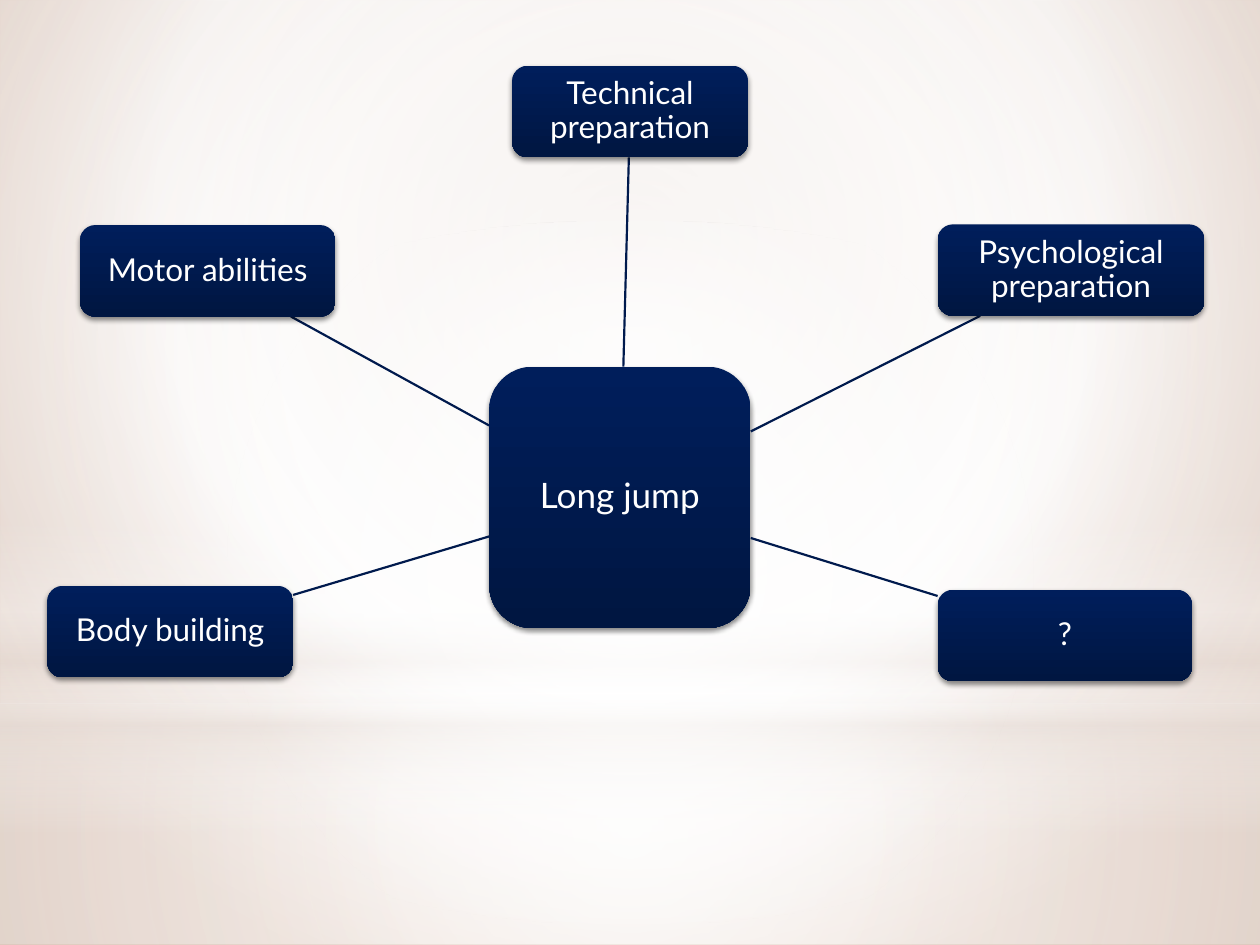
from lxml.etree import SubElement
from pptx import Presentation
from pptx.dml.color import RGBColor
from pptx.enum.shapes import MSO_CONNECTOR as Connector, MSO_SHAPE as Shape
from pptx.enum.text import MSO_ANCHOR as Anchor, PP_ALIGN as Align
from pptx.oxml import parse_xml
from pptx.oxml.ns import nsdecls, qn
from pptx.util import Pt

# Content: text and box as left, top, width, height in points
HUB = ("Long jump", (279.5, 209.5, 149.5, 149.5))
TOPICS = [
    ("Technical preparation", (292.7, 37.6, 134.7, 52.3)),
    ("Psychological preparation", (535.8, 128.2, 152.5, 52.3)),
    ("?", (535.8, 337, 145.5, 52.3)),
    ("Body building", (27, 334.8, 140.5, 52.3)),
    ("Motor abilities", (45.7, 128.6, 146, 52.3)),
]

WHITE, SAND = "FFFFFF", "E8DED8"
THEME = {
    "font": "Lato", "text": WHITE, "line": "001A4D",
    "hub_size": 20, "topic_size": 18,
    "box": [(0, "001E5B", 100), (100, "001641", 100)],
    "backdrop": [(0, "E3D4CB", 100), (60, WHITE, 100), (100, "CFAD99", 100)],
}
CENTRE = (50, 50, 50, 50)
# Soft light layers: shape, box, stops (position, colour, opacity), focus
LAYERS = [
    (Shape.RECTANGLE, (0, 402, 720, 138),
     [(0, WHITE, 91), (37, WHITE, 76), (100, SAND, 79)], CENTRE),
    (Shape.RECTANGLE, (0, 0, 720, 402),
     [(0, WHITE, 89), (48, WHITE, 62), (100, SAND, 79)], CENTRE),
    (Shape.RECTANGLE, (0, 297, 720, 180),
     [(0, WHITE, 0), (29, WHITE, 30), (45, SAND, 40), (55, WHITE, 26),
      (65, SAND, 60), (100, WHITE, 0)], None),
    (Shape.OVAL, (0, 126, 720, 402),
     [(0, WHITE, 100), (56, WHITE, 0)], CENTRE),
]


def set_gradient(fill, properties, stops, focus=None):
    """Fill with a circular gradient around focus, or else from top to bottom."""
    fill.solid()
    stop_xml = "".join(
        f'<a:gs pos="{position * 1000}"><a:srgbClr val="{color}">'
        f'<a:alpha val="{opacity * 1000}"/></a:srgbClr></a:gs>'
        for position, color, opacity in stops)
    if focus:
        sides = " ".join(f'{side}="{value * 1000}"' for side, value in zip("ltrb", focus))
        direction = f'<a:path path="circle"><a:fillToRect {sides}/></a:path>'
    else:
        direction = '<a:lin ang="5400000" scaled="0"/>'
    gradient = parse_xml(f'<a:gradFill {nsdecls("a")} rotWithShape="1">'
                         f'<a:gsLst>{stop_xml}</a:gsLst>{direction}</a:gradFill>')
    properties.replace(properties.find(qn("a:solidFill")), gradient)


def add_filled_shape(slide, kind, box, stops, focus=None):
    shape = slide.shapes.add_shape(kind, *map(Pt, box))
    shape.shadow.inherit = False
    shape.line.fill.background()
    set_gradient(shape.fill, shape.element.spPr, stops, focus)
    return shape


def add_box(slide, text, box, size, inset):
    shape = add_filled_shape(slide, Shape.ROUNDED_RECTANGLE, box, THEME["box"])
    effects = shape.element.spPr.find(qn("a:effectLst"))
    shadow = SubElement(effects, qn("a:outerShdw"), blurRad=str(Pt(3.1)),
                        dist=str(Pt(1.8)), dir="5400000", rotWithShape="0")
    color = SubElement(shadow, qn("a:srgbClr"), val="000000")
    SubElement(color, qn("a:alpha"), val="45000")

    frame = shape.text_frame
    frame.word_wrap = True
    frame.vertical_anchor = Anchor.MIDDLE
    frame.margin_left = frame.margin_right = Pt(inset)
    frame.margin_top = frame.margin_bottom = Pt(inset)
    paragraph = frame.paragraphs[0]
    paragraph.alignment = Align.CENTER
    paragraph.line_spacing = 0.9
    run = paragraph.add_run()
    run.text = text
    run.font.name = THEME["font"]
    run.font.size = Pt(size)
    run.font.color.rgb = RGBColor.from_string(THEME["text"])


def center(box):
    left, top, width, height = box
    return left + width / 2, top + height / 2


def edge_point(box, target):
    """Point where the ray from the box centre to target leaves the box."""
    x, y = center(box)
    dx, dy = target[0] - x, target[1] - y
    scale = 0.5 / max(abs(dx) / box[2], abs(dy) / box[3])
    return x + dx * scale, y + dy * scale


def add_spoke(slide, hub, topic):
    start, end = edge_point(hub, center(topic)), edge_point(topic, center(hub))
    spoke = slide.shapes.add_connector(Connector.STRAIGHT, *map(Pt, start + end))
    spoke.line.color.rgb = RGBColor.from_string(THEME["line"])
    spoke.line.width = Pt(1.25)
    SubElement(spoke.element.spPr, qn("a:effectLst"))


def main():
    presentation = Presentation()
    presentation.slide_width, presentation.slide_height = Pt(720), Pt(540)
    slide = presentation.slides.add_slide(presentation.slide_layouts[6])

    # Backdrop
    fill = slide.background.fill
    fill.solid()
    properties = slide.element.find(".//" + qn("p:bgPr"))
    set_gradient(fill, properties, THEME["backdrop"], (20, 10, 20, 60))
    for layer in LAYERS:
        add_filled_shape(slide, *layer)

    # Hub with its topics
    add_box(slide, *HUB, THEME["hub_size"], 4.5)
    for text, box in TOPICS:
        add_spoke(slide, HUB[1], box)
        add_box(slide, text, box, THEME["topic_size"], 3.6)

    presentation.save("out.pptx")


if __name__ == "__main__":
    main()
